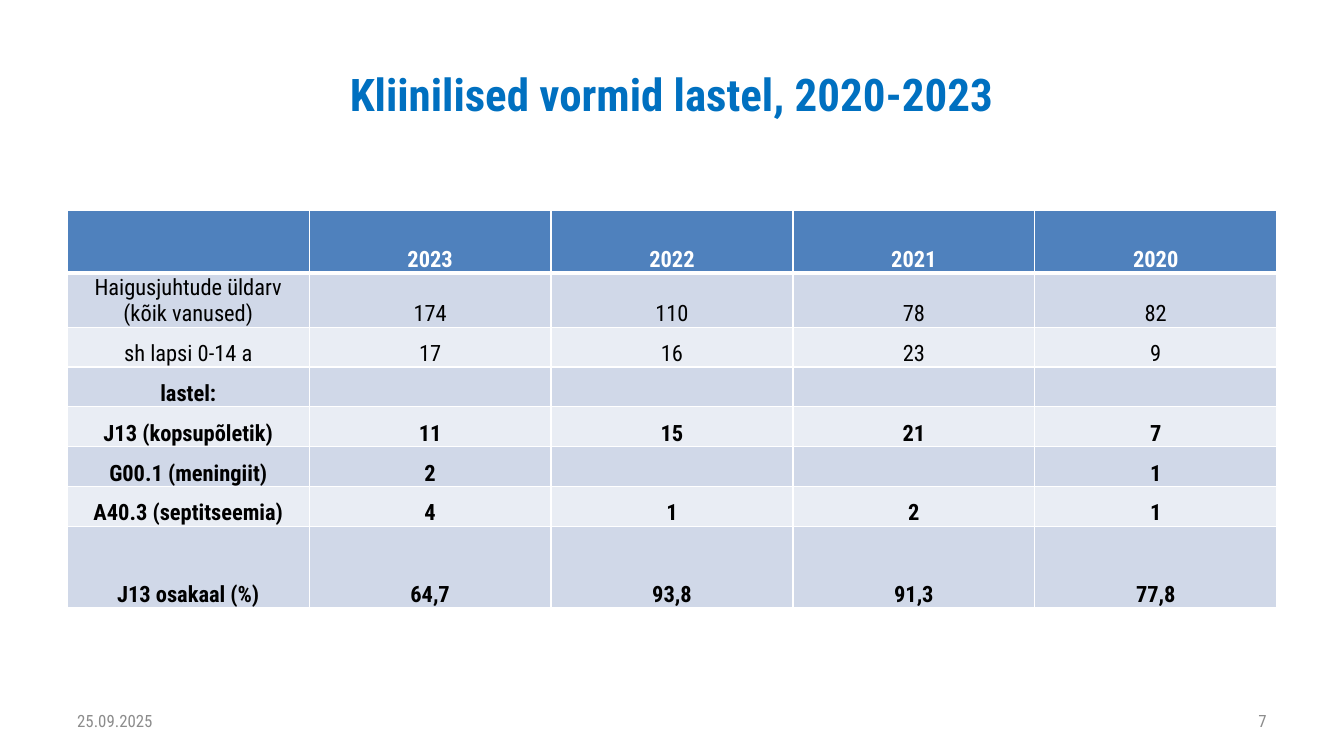
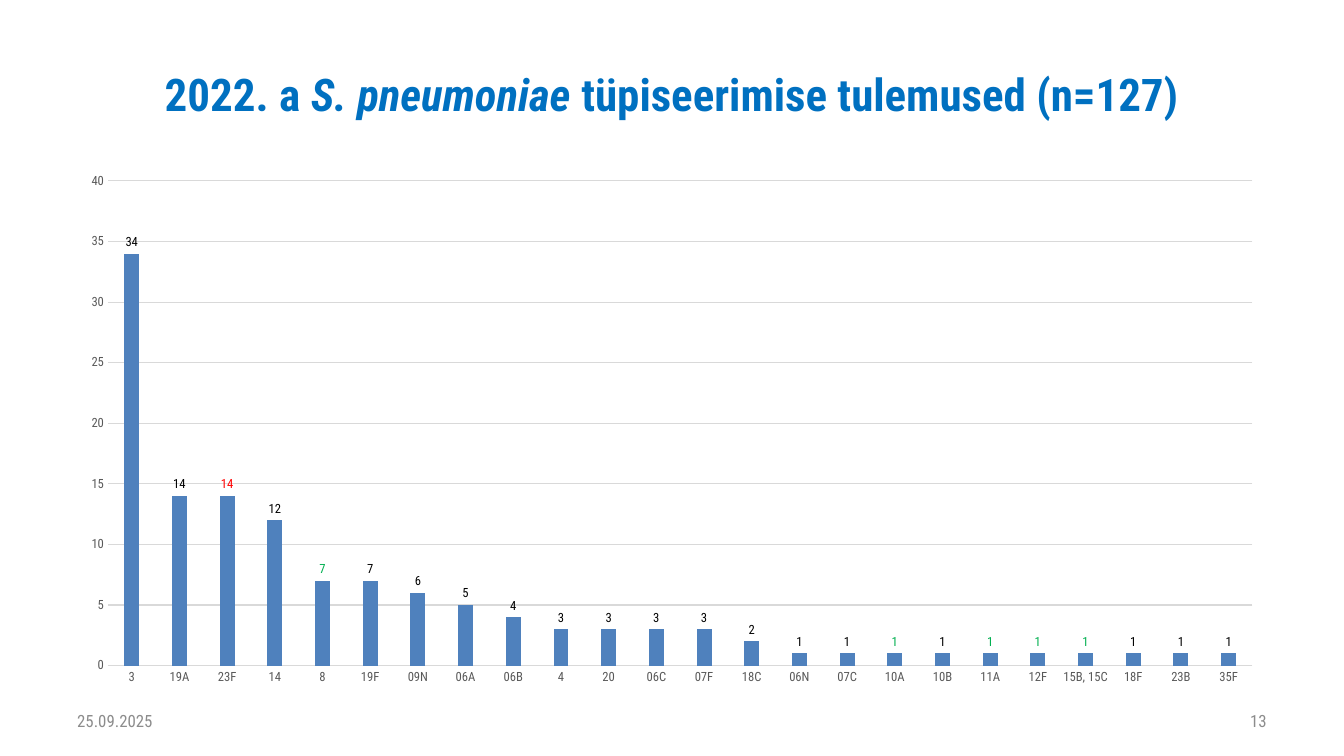
import pptx
import pptx.chart.data
import pptx.dml.color
import pptx.enum.chart
import pptx.enum.text
import pptx.oxml
import pptx.oxml.ns
import pptx.util

Cm = pptx.util.Cm
Pt = pptx.util.Pt
ALIGN = pptx.enum.text.PP_ALIGN
MIDDLE = pptx.enum.text.MSO_ANCHOR.MIDDLE

CASES = [
    ["", "2023", "2022", "2021", "2020"],
    ["Haigusjuhtude üldarv (kõik vanused)", "174", "110", "78", "82"],
    ["sh lapsi 0-14 a", "17", "16", "23", "9"],
    ["lastel:", "", "", "", ""],
    ["J13 (kopsupõletik)", "11", "15", "21", "7"],
    ["G00.1 (meningiit)", "2", "", "", "1"],
    ["A40.3 (septitseemia)", "4", "1", "2", "1"],
    ["J13 osakaal (%)", "64,7", "93,8", "91,3", "77,8"],
]
ROW_HEIGHTS = [1.58, 1.31, 1, 1, 1, 1, 1, 2.05]
PLAIN_ROWS = (1, 2)

SEROTYPES = {
    "3": 34, "19A": 14, "23F": 14, "14": 12, "8": 7, "19F": 7, "09N": 6, "06A": 5,
    "06B": 4, "4": 3, "20": 3, "06C": 3, "07F": 3, "18C": 2, "06N": 1, "07C": 1,
    "10A": 1, "10B": 1, "11A": 1, "12F": 1, "15B, 15C": 1, "18F": 1, "23B": 1, "35F": 1,
}
RED, GREEN = "FF0000", "00B050"
LABEL_COLORS = {"23F": RED, **dict.fromkeys(["8", "10A", "11A", "12F", "15B, 15C"], GREEN)}


def rgb(color):
    return pptx.dml.color.RGBColor.from_string(color)


def apply(target, **values):
    for name, value in values.items():
        setattr(target, name, value)


class Deck:
    FONT = "Roboto Condensed"
    TITLE, ACCENT, FOOTER = "0070C0", "4F81BD", "8C8C8C"
    BANDS = ("E9EDF4", "D0D8E8")
    WHITE, BLACK, AXIS_TEXT, GRID = "FFFFFF", "000000", "595959", "D9D9D9"
    LEFT, WIDTH = 1.69, 30.37

    def __init__(self):
        self.presentation = pptx.Presentation()
        apply(self.presentation, slide_width=Cm(33.75), slide_height=Cm(18.98))
        self.slide = None

    def style(self, font, size, color, **values):
        apply(font, name=self.FONT, size=Pt(size), **values)
        font.color.rgb = rgb(color)

    def add_slide(self, title_runs, number):
        """Start a slide with its title, date and page number."""
        layout = self.presentation.slide_layouts[5]
        self.slide = self.presentation.slides.add_slide(layout)
        title = self.slide.shapes.title
        apply(title, left=Cm(self.LEFT), top=Cm(0.76), width=Cm(self.WIDTH), height=Cm(3.18))
        apply(title.text_frame, vertical_anchor=MIDDLE, word_wrap=True,
              auto_size=pptx.enum.text.MSO_AUTO_SIZE.NONE)
        paragraph = title.text_frame.paragraphs[0]
        paragraph.alignment = ALIGN.CENTER
        for text, italic in title_runs:
            run = paragraph.add_run()
            run.text = text
            self.style(run.font, 32, self.TITLE, bold=True, italic=italic)
        width = 7.87
        self.add_footer("25.09.2025", self.LEFT, width, ALIGN.LEFT)
        self.add_footer(number, self.LEFT + self.WIDTH - width, width, ALIGN.RIGHT)

    def add_footer(self, text, left, width, alignment):
        shape = self.slide.shapes.add_textbox(Cm(left), Cm(17.6), Cm(width), Cm(1.01))
        apply(shape.text_frame, word_wrap=True, vertical_anchor=MIDDLE)
        paragraph = shape.text_frame.paragraphs[0]
        apply(paragraph, text=text, alignment=alignment)
        self.style(paragraph.runs[0].font, 12, self.FOOTER)

    def add_table(self, rows, heights, top, plain_rows):
        table = self.slide.shapes.add_table(
            len(rows), len(rows[0]), Cm(self.LEFT), Cm(top),
            Cm(self.WIDTH), Cm(sum(heights))).table
        for column in table.columns:
            column.width = Cm(self.WIDTH / len(rows[0]))
        for index, (texts, height) in enumerate(zip(rows, heights)):
            table.rows[index].height = Cm(height)
            header = index == 0
            for column, text in enumerate(texts):
                cell = table.cell(index, column)
                # The rule under the header is thicker than the others
                self.add_borders(cell, bottom=3 if header else 1)
                cell.fill.solid()
                cell.fill.fore_color.rgb = rgb(self.ACCENT if header else self.BANDS[index % 2])
                apply(cell, margin_left=Cm(0.13), margin_right=Cm(0.13), margin_top=0,
                      margin_bottom=0, vertical_anchor=pptx.enum.text.MSO_ANCHOR.BOTTOM)
                if text:
                    paragraph = cell.text_frame.paragraphs[0]
                    apply(paragraph, text=text, alignment=ALIGN.CENTER)
                    self.style(paragraph.runs[0].font, 16, self.WHITE if header else self.BLACK,
                               bold=index not in plain_rows)

    def add_borders(self, cell, bottom):
        properties = cell._tc.get_or_add_tcPr()
        for side, width in (("L", 1), ("R", 1), ("T", 1), ("B", bottom)):
            properties.append(pptx.oxml.parse_xml(
                f'<a:ln{side} {pptx.oxml.ns.nsdecls("a")} w="{Pt(width)}"><a:solidFill>'
                f'<a:srgbClr val="{self.WHITE}"/></a:solidFill></a:ln{side}>'))

    def add_column_chart(self, values, top, height, label_colors):
        data = pptx.chart.data.CategoryChartData()
        data.categories = list(values)
        data.add_series("Series 1", list(values.values()))
        chart = self.slide.shapes.add_chart(
            pptx.enum.chart.XL_CHART_TYPE.COLUMN_CLUSTERED, Cm(self.LEFT), Cm(top),
            Cm(self.WIDTH), Cm(height), data).chart
        apply(chart, has_legend=False, has_title=False)
        self.style(chart.font, 10, self.BLACK)

        # Axes
        for axis in (chart.category_axis, chart.value_axis):
            tick_none = pptx.enum.chart.XL_TICK_MARK.NONE
            apply(axis, major_tick_mark=tick_none, minor_tick_mark=tick_none)
            self.style(axis.tick_labels.font, 9, self.AXIS_TEXT)
        apply(chart.value_axis, minimum_scale=0, maximum_scale=40, major_unit=5,
              has_major_gridlines=True)
        chart.value_axis.format.line.fill.background()
        for line in (chart.category_axis.format.line,
                     chart.value_axis.major_gridlines.format.line):
            line.color.rgb = rgb(self.GRID)
            line.width = Pt(0.75)

        # Columns and their labels
        plot = chart.plots[0]
        apply(plot, gap_width=219, overlap=-27, vary_by_categories=False)
        outside = pptx.enum.chart.XL_LABEL_POSITION.OUTSIDE_END
        series = plot.series[0]
        series.format.fill.solid()
        series.format.fill.fore_color.rgb = rgb(self.ACCENT)
        apply(series.data_labels, show_value=True, position=outside)
        self.style(series.data_labels.font, 9, self.BLACK)
        for index, category in enumerate(values):
            if category in label_colors:
                label = series.points[index].data_label
                self.style(label.font, 9, label_colors[category])
                label.position = outside


def main():
    deck = Deck()

    # Clinical forms in children
    deck.add_slide([("Kliinilised vormid lastel, 2020-2023", False)], "7")
    deck.add_table(CASES, ROW_HEIGHTS, 5.28, PLAIN_ROWS)

    # Serotyping results
    deck.add_slide([("2022. a ", False), ("S. pneumoniae ", True),
                    ("tüpiseerimise tulemused (n=127)", False)], "13")
    deck.add_column_chart(SEROTYPES, 4.09, 13.36, LABEL_COLORS)

    deck.presentation.save("out.pptx")


if __name__ == "__main__":
    main()
